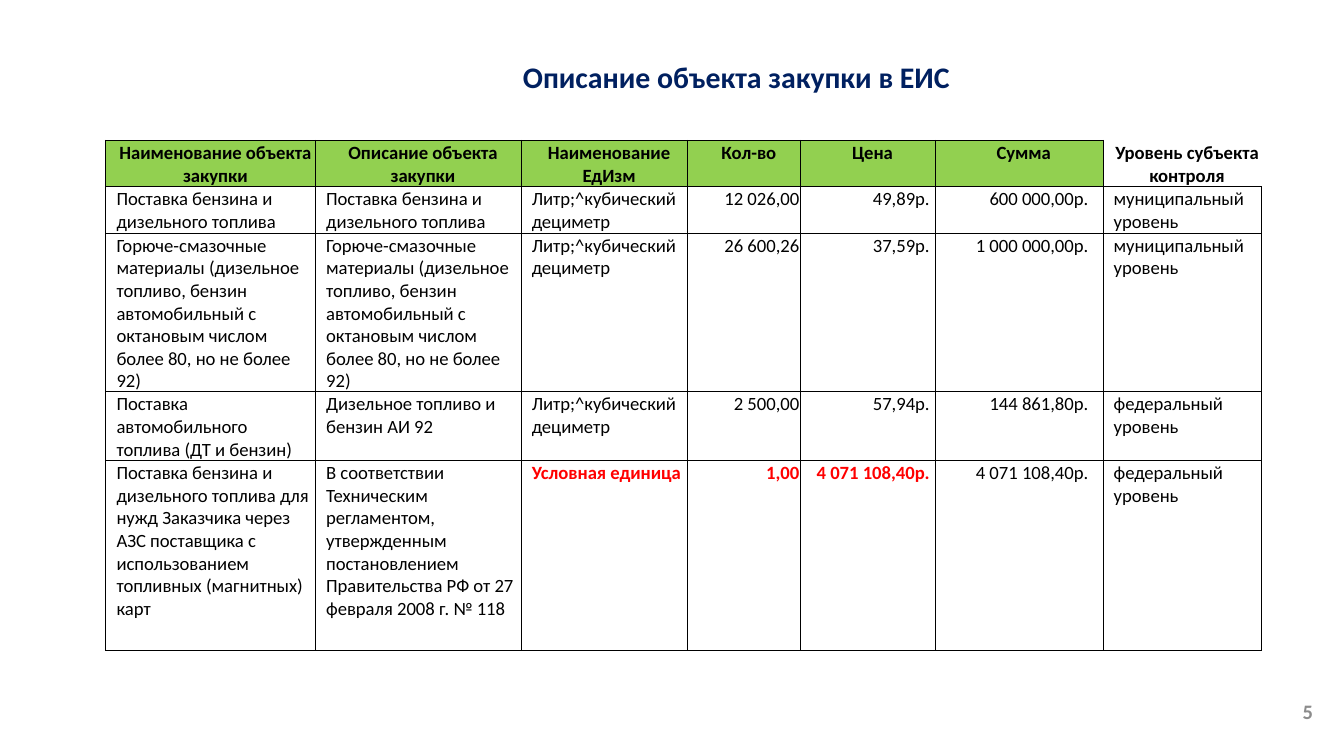
from lxml.etree import SubElement as Sub
from pptx import Presentation
from pptx.dml.color import RGBColor as Rgb
from pptx.enum.text import MSO_ANCHOR as Anchor, PP_ALIGN as Align
from pptx.oxml.ns import qn
from pptx.util import Inches, Pt

WIDE = Inches(10)
HIGH = WIDE * 9 // 16
FONT = "Calibri"
HUES = {"navy": "002060", "green": "92D050", "black": "000000",
        "red": "FF0000", "gray": "8C8C8C"}

COLS = [1.56, 1.53, 1.24, 0.84, 1, 1.25, 1.18]
ROWS = [0.34, 0.34, 1.18, 0.51, 1.41]
SIDES = [Align.LEFT] * 3 + [Align.RIGHT] * 3 + [Align.LEFT]
PADS = [0.01, 0.01, 0.01, 0.01, 0.04, 0.11, 0.01]  # right cell margins

HEAD = ["Наименование объекта закупки", "Описание объекта закупки",
        "Наименование ЕдИзм", "Кол-во", "Цена", "Сумма",
        "Уровень субъекта контроля"]
FUEL = "Поставка бензина и дизельного топлива"
OILS = ("Горюче-смазочные материалы (дизельное топливо, бензин автомобильный "
        "с октановым числом более 80, но не более 92)")
UNIT = "Литр;^кубический дециметр"
TOWN, STATE = "муниципальный уровень", "федеральный уровень"
BODY = [
    [FUEL, FUEL, UNIT, "12 026,00", "49,89р.", "600 000,00р.", TOWN],
    [OILS, OILS, UNIT, "26 600,26", "37,59р.", "1 000 000,00р.", TOWN],
    ["Поставка автомобильного топлива (ДТ и бензин)",
     "Дизельное топливо и бензин АИ 92", UNIT,
     "2 500,00", "57,94р.", "144 861,80р.", STATE],
    [FUEL + " для нужд Заказчика через АЗС поставщика с использованием "
     "топливных (магнитных) карт",
     "В соответствии Техническим регламентом, утвержденным постановлением "
     "Правительства РФ от 27 февраля 2008 г. № 118",
     "Условная единица", "1,00", "4 071 108,40р.", "4 071 108,40р.", STATE],
]
ALERT = {(4, 2), (4, 3), (4, 4)}  # cells in red


def share(x, y, w, h):
    """Turn percentages of the slide into a box."""
    return [round(part * full / 100)
            for part, full in zip((x, y, w, h), (WIDE, HIGH) * 2)]


def style(par, size, hue, bold, side):
    par.alignment = side
    par.font.name, par.font.size, par.font.bold = FONT, Pt(size), bold
    par.font.color.rgb = Rgb.from_string(HUES[hue])


def add_title(slide, box):
    title = slide.shapes.title
    title.left, title.top, title.width, title.height = box
    frame = title.text_frame
    frame.text = "Описание объекта закупки в ЕИС"
    frame.word_wrap, frame.vertical_anchor = True, Anchor.TOP
    style(frame.paragraphs[0], 16, "navy", True, Align.CENTER)


def add_page(slide, box):
    frame = slide.shapes.add_textbox(*box).text_frame
    frame.text = "5"
    frame.word_wrap, frame.vertical_anchor = True, Anchor.MIDDLE
    frame.margin_left = frame.margin_right = Inches(0.07)
    frame.margin_top = frame.margin_bottom = Inches(0.04)
    style(frame.paragraphs[0], 11, "gray", True, Align.RIGHT)


def edge(cell, widths):
    """Draw cell borders; a width of 0 leaves the side open."""
    props = cell._tc.get_or_add_tcPr()
    for side, width in zip("LRTB", widths):
        line = Sub(props, qn(f"a:ln{side}"), w=str(Pt(width)))
        if width:
            fill = Sub(line, qn("a:solidFill"))
            Sub(fill, qn("a:srgbClr"), val=HUES["black"])
        else:
            Sub(line, qn("a:noFill"))


def fill_cell(cell, text, row, col):
    head, last = row == 0, col == len(COLS) - 1
    if head:
        edge(cell, (0.5, 0, 0, 0.5) if last else (0.5, 0.5, 1, 0.5))
    else:
        edge(cell, (0.5,) * 4)
    if head and not last:
        cell.fill.solid()
        cell.fill.fore_color.rgb = Rgb.from_string(HUES["green"])
    else:
        cell.fill.background()
    cell.margin_left = Inches(0.08)
    cell.margin_right = Inches(0.01 if head else PADS[col])
    cell.margin_top, cell.margin_bottom = Inches(0.01), 0
    cell.text = text
    red = (row, col) in ALERT
    style(cell.text_frame.paragraphs[0], 10, "red" if red else "black",
          head or red, Align.CENTER if head else SIDES[col])


def add_grid(slide, box):
    wide, high = box[2:]
    table = slide.shapes.add_table(len(ROWS), len(COLS), *box).table
    table.first_row = table.horz_banding = False
    for col, part in zip(table.columns, COLS):
        col.width = round(wide * part / sum(COLS))
    for row, part in zip(table.rows, ROWS):
        row.height = round(high * part / sum(ROWS))
    for r, texts in enumerate([HEAD] + BODY):
        for c, text in enumerate(texts):
            fill_cell(table.cell(r, c), text, r, c)


def main():
    deck = Presentation()
    deck.slide_width, deck.slide_height = WIDE, HIGH
    slide = deck.slides.add_slide(deck.slide_layouts[5])
    # Page number, table, title
    add_page(slide, share(75.9, 91.4, 22.5, 5.3))
    add_grid(slide, share(7.87, 18.6, 86, 67.3))
    add_title(slide, share(29, 6.9, 51.6, 6.6))
    deck.save("out.pptx")


if __name__ == "__main__":
    main()
